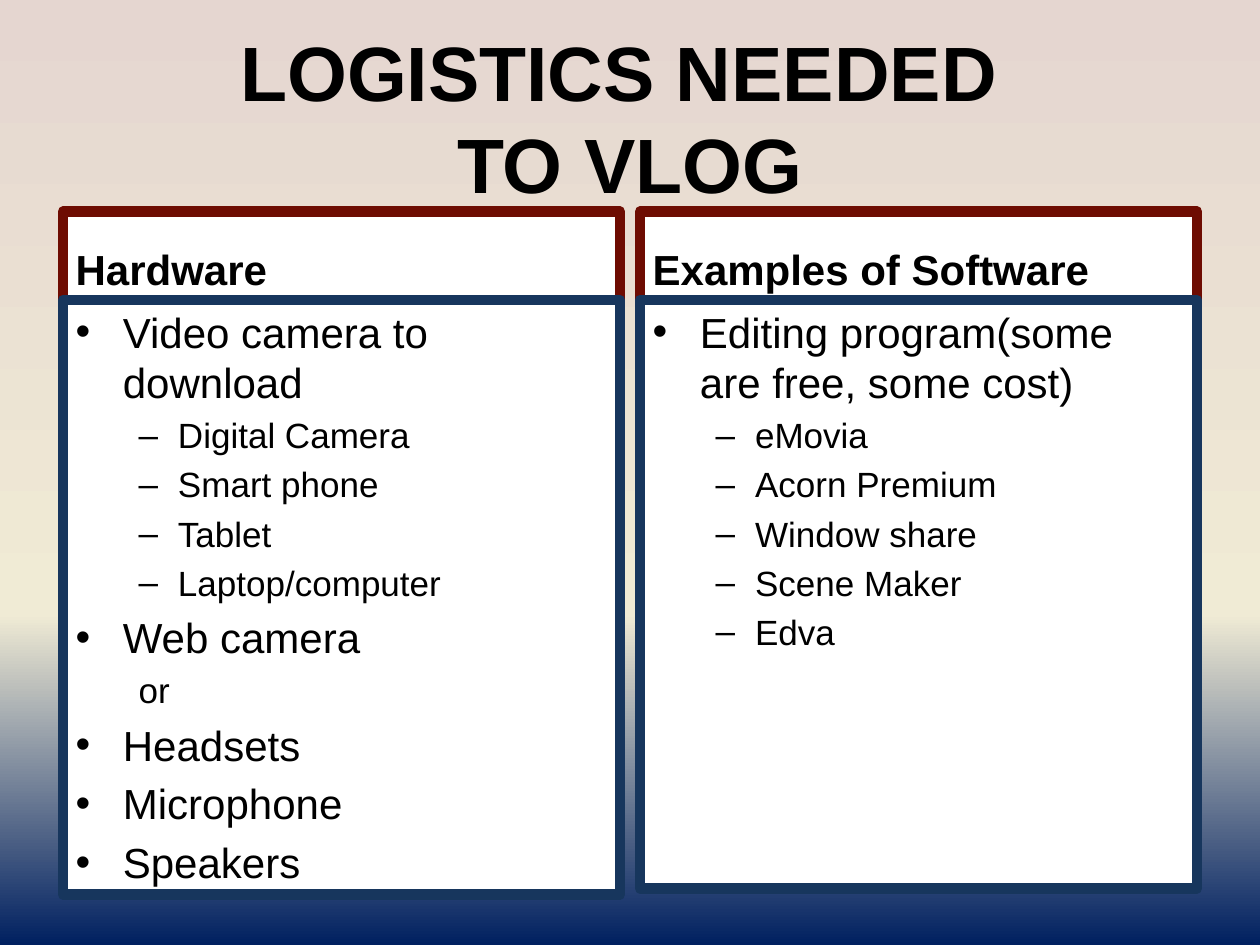
from copy import deepcopy

from lxml import etree
from pptx import Presentation
from pptx.dml.color import RGBColor
from pptx.enum.text import MSO_ANCHOR, MSO_AUTO_SIZE, PP_ALIGN
from pptx.oxml.ns import qn
from pptx.util import Inches, Pt

TOP, MID, LOW = MSO_ANCHOR.TOP, MSO_ANCHOR.MIDDLE, MSO_ANCHOR.BOTTOM
FIXED = MSO_AUTO_SIZE.NONE
CENTER = PP_ALIGN.CENTER
RED, NAVY = "6E0C02", "17365D"

# Grid: two columns inside equal margins
EDGE, COL, STEP = 0.5, 4.42, 4.58
HEAD, LIST = 1.68, 2.38


def color(code):
    return RGBColor.from_string(code)


def place(box, left, top, wide, high, anchor, line=None):
    box.left, box.top = Inches(left), Inches(top)
    box.width, box.height = Inches(wide), Inches(high)
    box.text_frame.auto_size = FIXED
    box.text_frame.vertical_anchor = anchor
    if line:
        box.fill.solid()
        box.fill.fore_color.rgb = color("FFFFFF")
        box.line.color.rgb = color(line)
        box.line.width = Pt(6)
    for para in box.text_frame.paragraphs:
        for run in para.runs:
            run.font.name = "Arial"
            run.font.color.rgb = color("000000")


# Each column: heading, list height, (level, text) items
COLUMNS = [
    ("Hardware", 4.72, [
        (0, "Video camera to download"),
        (1, "Digital Camera"),
        (1, "Smart phone"),
        (1, "Tablet"),
        (1, "Laptop/computer"),
        (0, "Web camera"),
        (1, "or"),
        (0, "Headsets"),
        (0, "Microphone"),
        (0, "Speakers"),
    ]),
    ("Examples of Software", 4.67, [
        (0, "Editing program(some are free, some cost)"),
        (1, "eMovia"),
        (1, "Acorn Premium"),
        (1, "Window share"),
        (1, "Scene Maker"),
        (1, "Edva"),
    ]),
]

deck = Presentation()
deck.slide_width, deck.slide_height = Inches(10), Inches(7.5)
slide = deck.slides.add_slide(deck.slide_layouts.get_by_name("Comparison"))
spots = {spot.placeholder_format.idx: spot for spot in slide.placeholders}

# Background gradient, top to bottom
fill = slide.background.fill
fill.gradient()
fill.gradient_angle = 270
stops = next(slide.element.iter(qn("a:gsLst")))
stops.insert(1, deepcopy(stops[0]))
shades = [(0, "E5D6D0"), (0.65, "F0EBD5"), (1, "002060")]
for stop, (pos, code) in zip(fill.gradient_stops, shades):
    stop.position = pos
    stop.color.rgb = color(code)

# Title
title = slide.shapes.title
title.text_frame.text = "LOGISTICS NEEDED \vTO VLOG"
para = title.text_frame.paragraphs[0]
para.alignment = CENTER
for run in para.runs:
    run.font.size, run.font.bold = Pt(44), True
place(title, EDGE, 0.3, 9, 1.25, MID)

# Columns
for i, (name, high, items) in enumerate(COLUMNS):
    left = EDGE + i * STEP
    head, body = spots[1 + 2 * i], spots[2 + 2 * i]

    head.text_frame.text = name
    font = head.text_frame.paragraphs[0].runs[0].font
    font.size, font.bold = Pt(24), True
    place(head, left, HEAD, COL, LIST - HEAD, LOW, RED)

    body.text_frame.text = "\n".join(text for level, text in items)
    for para, (level, text) in zip(body.text_frame.paragraphs, items):
        para.level = level
        para.runs[0].font.size = Pt(20 if level else 24)
        if text == "or":  # plain line without a dash
            props = para._p.get_or_add_pPr()
            props.set("marL", str(Inches(0.5)))
            props.set("indent", "0")
            etree.SubElement(props, qn("a:buNone"))
    place(body, left, LIST, COL, high, TOP, NAVY)

deck.save("out.pptx")
